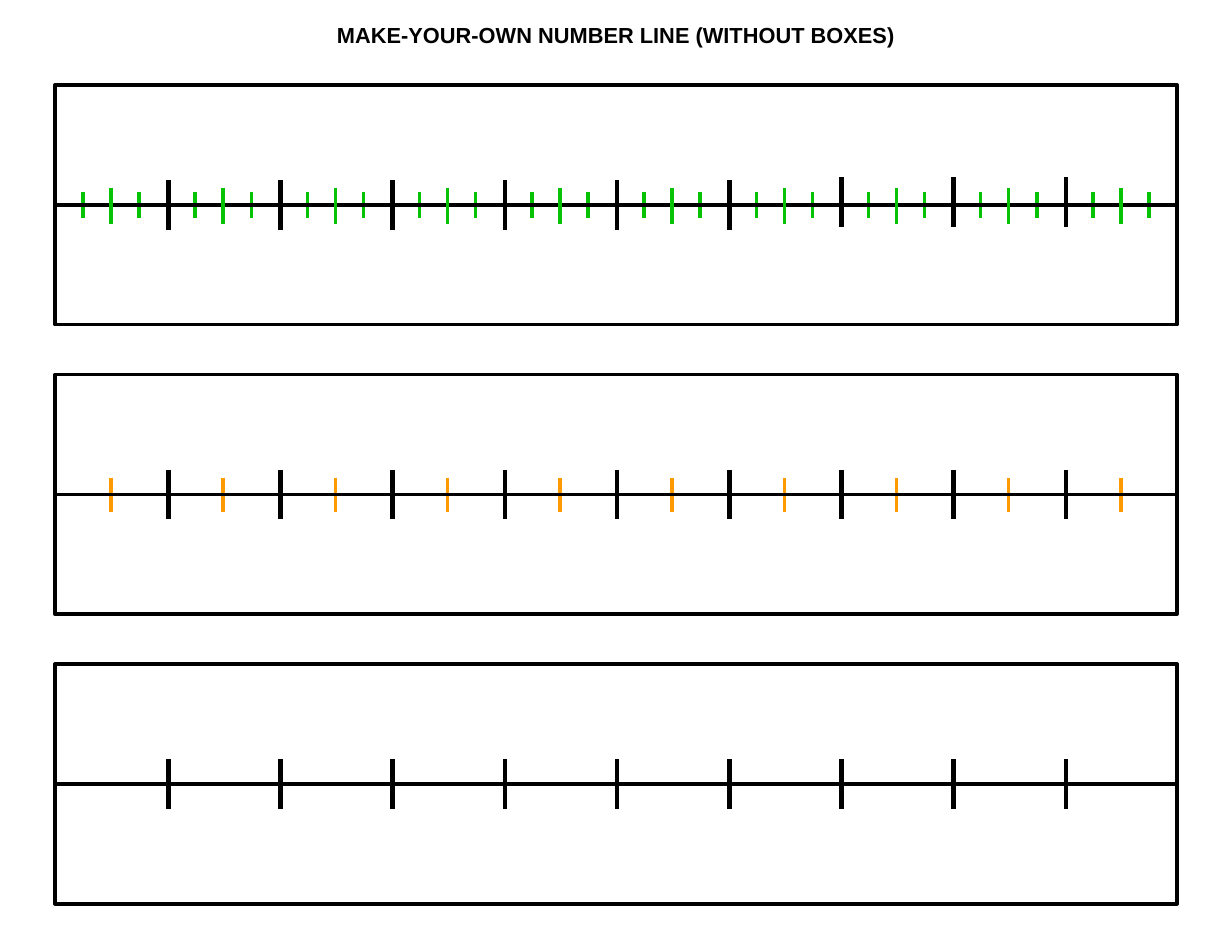
from lxml import etree
from pptx import Presentation
from pptx import util as u
from pptx.dml.color import RGBColor
from pptx.enum import shapes, text
from pptx.oxml.ns import qn

THEME = {
    "ink": RGBColor(0x00, 0x00, 0x00),
    "paper": RGBColor(0xFF, 0xFF, 0xFF),
    "half": RGBColor(0xFF, 0x99, 0x00),
    "quarter": RGBColor(0x06, 0xC3, 0x06),
    "font": "Arial",
    "title": u.Pt(14),
    "thin": u.Pt(2.25),
    "thick": u.Pt(3),
}

# Panel grid, in inches: one column per whole number, one row per number line
LEFT, WIDTH, HEIGHT = 0.49, 10.02, 2.14
TOP, ROW = 0.76, 2.585
COLS = 10
COL = WIDTH / COLS
RIGHT = LEFT + WIDTH


def add_line(group, x1, y1, x2, y2, color, width):
    ends = [u.Inches(n) for n in (x1, y1, x2, y2)]
    line = group.shapes.add_connector(shapes.MSO_CONNECTOR.STRAIGHT, *ends)
    line.line.color.rgb = THEME[color]
    line.line.width = THEME[width]
    etree.SubElement(line._element.spPr, qn("a:effectLst"))
    return line


def add_ticks(group, columns, axis_y, above, below, color, width="thin"):
    """Draw one tick at each position, counted in columns from the panel's left."""
    for c in columns:
        x = LEFT + c * COL
        add_line(group, x, axis_y - above, x, axis_y + below, color, width)


prs = Presentation()
prs.slide_width, prs.slide_height = u.Inches(11), u.Inches(8.5)
s = prs.slides.add_slide(prs.slide_layouts[5])

# Title
title = s.shapes.title
box = {"left": 2.84, "top": 0.09, "width": 5.32, "height": 0.44}
for name, value in box.items():
    setattr(title, name, u.Inches(value))
tf = title.text_frame
frame = {"word_wrap": True, "auto_size": text.MSO_AUTO_SIZE.SHAPE_TO_FIT_TEXT,
         "vertical_anchor": text.MSO_ANCHOR.MIDDLE}
frame.update({f"margin_{side}": u.Inches(0.1) for side in ("left", "top", "right", "bottom")})
for name, value in frame.items():
    setattr(tf, name, value)
p = tf.paragraphs[0]
p.alignment = text.PP_ALIGN.CENTER
r = p.add_run()
r.text = "MAKE-YOUR-OWN NUMBER LINE (WITHOUT BOXES)"
for name, value in {"name": THEME["font"], "size": THEME["title"], "bold": True}.items():
    setattr(r.font, name, value)
r.font.color.rgb = THEME["ink"]

# Tick positions, in columns
wholes = [n + 0.01 for n in range(1, COLS)]
halves = [n + 0.5 for n in range(COLS)]
quarters = [n / 2 + 0.25 for n in range(2 * COLS)]

# Number lines: quarters, halves, wholes
for row, parts in enumerate(("quarter", "half", "whole")):
    top = TOP + row * ROW
    axis_y = top + HEIGHT / 2
    group = s.shapes.add_group_shape()

    panel = group.shapes.add_shape(
        shapes.MSO_SHAPE.RECTANGLE,
        *[u.Inches(n) for n in (LEFT, top, WIDTH, HEIGHT)])
    panel.shadow.inherit = False
    panel.fill.solid()
    panel.fill.fore_color.rgb = THEME["paper"]
    panel.line.color.rgb = THEME["ink"]
    panel.line.width = THEME["thin"]

    if parts == "half":
        add_ticks(group, halves, axis_y, 0.15, 0.16, "half")

    # The last three whole ticks of the quarters line sit a little higher
    level = 6 if parts == "quarter" else len(wholes)
    add_ticks(group, wholes[:level], axis_y, 0.22, 0.22, "ink", "thick")
    add_ticks(group, wholes[level:], axis_y, 0.25, 0.2, "ink", "thick")

    if parts == "quarter":
        add_ticks(group, quarters, axis_y, 0.12, 0.12, "quarter")

    axis = add_line(group, LEFT, axis_y, RIGHT, axis_y, "ink", "thin")
    axis.begin_connect(panel, 1)
    axis.end_connect(panel, 3)

    if parts == "quarter":
        add_ticks(group, halves, axis_y, 0.15, 0.17, "quarter")

prs.save("out.pptx")
